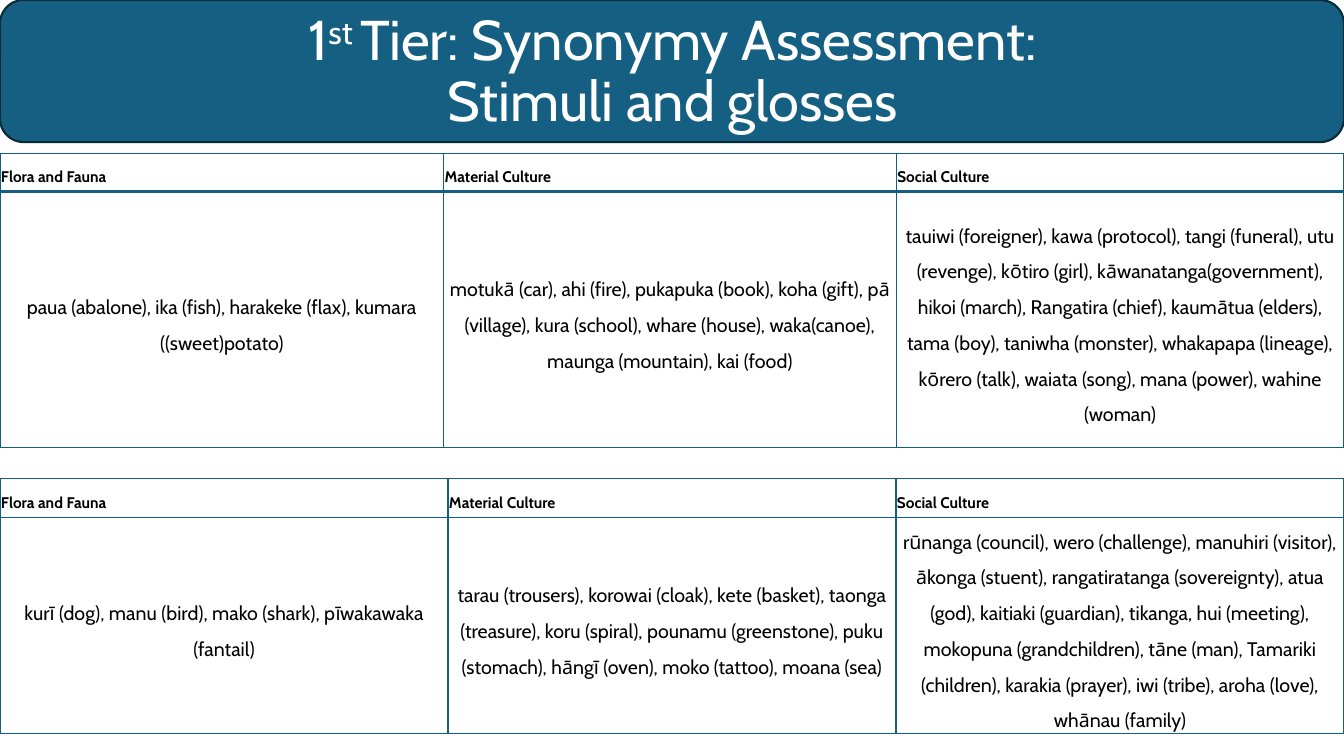
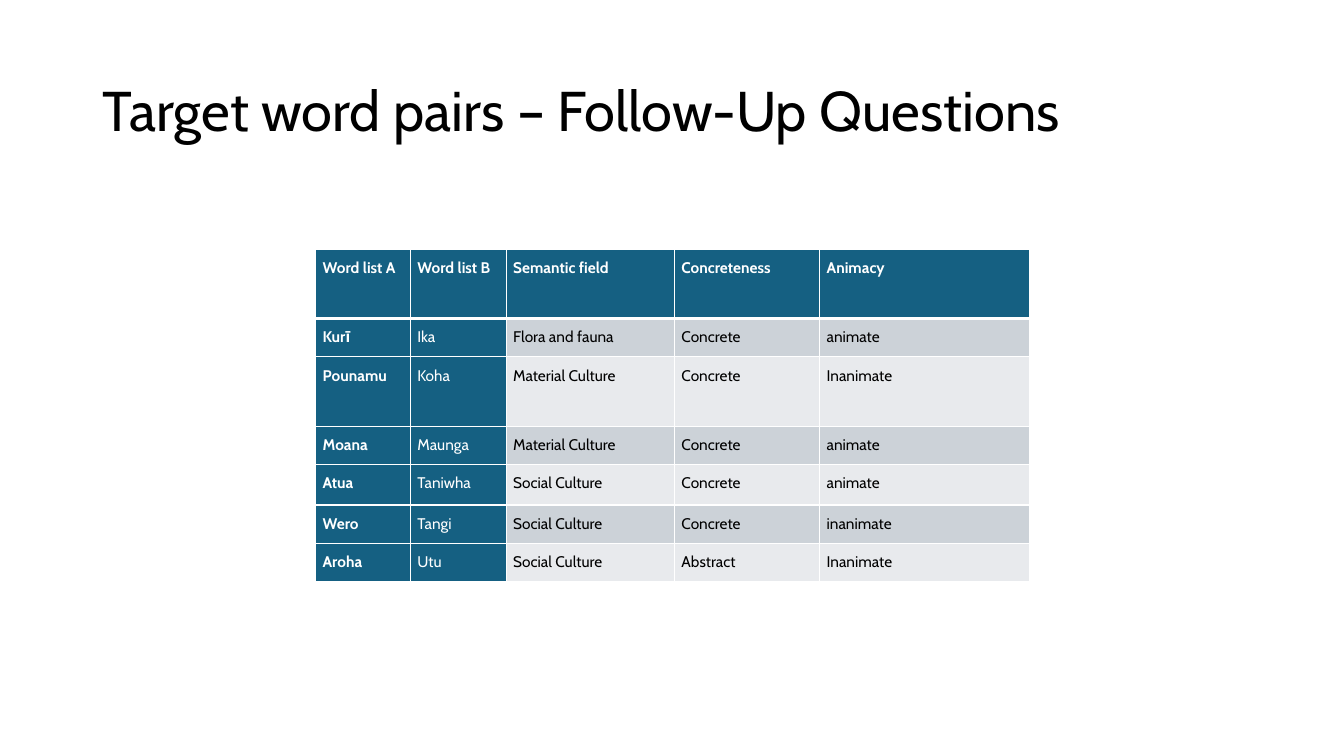
from pptx import Presentation
from pptx.dml.color import RGBColor
from pptx.enum.shapes import MSO_SHAPE
from pptx.enum.text import MSO_ANCHOR, MSO_AUTO_SIZE, PP_ALIGN
from pptx.oxml.ns import qn
from pptx.util import Inches, Pt
from lxml.etree import SubElement

FONT = "Cabin"
COLORS = {
    "blue": "156082",
    "edge": "092A39",
    "white": "FFFFFF",
    "black": "000000",
    "dark": "CCD2D8",
    "light": "E8EAED",
}
WIDTH = 13.33
FIELDS = ["Flora and Fauna", "Material Culture", "Social Culture"]
LIST_A = [
    "paua (abalone), ika (fish), harakeke (flax), kumara ((sweet)potato)",
    "motukā (car), ahi (fire), pukapuka (book), koha (gift), pā (village), "
    "kura (school), whare (house), waka(canoe), maunga (mountain), kai (food)",
    "tauiwi (foreigner), kawa (protocol), tangi (funeral), utu (revenge), "
    "kōtiro (girl), kāwanatanga(government), hikoi (march), Rangatira (chief), "
    "kaumātua (elders), tama (boy), taniwha (monster), whakapapa (lineage), "
    "kōrero (talk), waiata (song), mana (power), wahine (woman)",
]
LIST_B = [
    "kurī (dog), manu (bird), mako (shark), pīwakawaka (fantail)",
    "tarau (trousers), korowai (cloak), kete (basket), taonga (treasure), "
    "koru (spiral), pounamu (greenstone), puku (stomach), hāngī (oven), "
    "moko (tattoo), moana (sea)",
    "rūnanga (council), wero (challenge), manuhiri (visitor), ākonga (stuent), "
    "rangatiratanga (sovereignty), atua (god), kaitiaki (guardian), tikanga, "
    "hui (meeting), mokopuna (grandchildren), tāne (man), Tamariki (children), "
    "karakia (prayer), iwi (tribe), aroha (love), whānau (family)",
]
PAIRS = [
    ["Word list A", "Word list B", "Semantic field", "Concreteness", "Animacy"],
    ["Kurī", "Ika", "Flora and fauna", "Concrete", "animate"],
    ["Pounamu", "Koha", "Material Culture", "Concrete", "Inanimate"],
    ["Moana", "Maunga", "Material Culture", "Concrete", "animate"],
    ["Atua", "Taniwha", "Social Culture", "Concrete", "animate"],
    ["Wero", "Tangi", "Social Culture", "Concrete", "inanimate"],
    ["Aroha", "Utu", "Social Culture", "Abstract", "Inanimate"],
]


def get_rgb(name):
    return RGBColor.from_string(COLORS[name])


def add_run(para, text, size, color, bold=False):
    run = para.add_run()
    run.text = text
    run.font.name = FONT
    run.font.size = Pt(size)
    run.font.bold = bold
    run.font.color.rgb = get_rgb(color)
    return run


def add_slide(prs, align):
    """Add a slide and return it with its empty title paragraph."""
    slide = prs.slides.add_slide(prs.slide_layouts.get_by_name("Title Only"))
    title = slide.shapes.title
    title.left, title.top = Inches(0.92), Inches(0.4)
    title.width, title.height = Inches(11.5), Inches(1.45)
    frame = title.text_frame
    frame.word_wrap = True
    frame.auto_size = MSO_AUTO_SIZE.NONE
    frame.vertical_anchor = MSO_ANCHOR.MIDDLE
    para = frame.paragraphs[0]
    para.alignment = align
    para.line_spacing = 0.9
    return slide, para


def add_banner(slide):
    """Put the rounded band behind the title."""
    band = slide.shapes.add_shape(
        MSO_SHAPE.ROUNDED_RECTANGLE, 0, 0, Inches(WIDTH), Inches(1.41))
    band.shadow.inherit = False
    band.fill.solid()
    band.fill.fore_color.rgb = get_rgb("blue")
    band.line.color.rgb = get_rgb("edge")
    band.line.width = Pt(1.5)
    slide.shapes.title.element.addprevious(band.element)


def add_grid(slide, left, top, cols, rows):
    frame = slide.shapes.add_table(
        len(rows), len(cols), Inches(left), Inches(top),
        Inches(sum(cols)), Inches(sum(rows)))
    table = frame.table
    table.first_row = table.horz_banding = False
    for col, width in zip(table.columns, cols):
        col.width = Inches(width)
    for row, height in zip(table.rows, rows):
        row.height = Inches(height)
    return table


def set_lines(cell, color, base=1):
    """Draw the cell borders; base is the width of the bottom one."""
    props = cell._tc.get_or_add_tcPr()
    for side, width in (("L", 1), ("R", 1), ("T", 1), ("B", base)):
        line = SubElement(props, qn(f"a:ln{side}"), w=str(Pt(width)))
        fill = SubElement(line, qn("a:solidFill"))
        SubElement(fill, qn("a:srgbClr"), val=COLORS[color])


def set_cell(cell, text, size, color, bold, align, pad):
    """Fill in the text; pad holds the side and the top margins."""
    cell.margin_left = cell.margin_right = Inches(pad[0])
    cell.margin_top = cell.margin_bottom = Inches(pad[1])
    para = cell.text_frame.paragraphs[0]
    para.alignment = align
    para.line_spacing = 1.5
    para.space_after = Pt(8)
    add_run(para, text, size, color, bold)


def add_words(slide, top, cols, rows, words, rule):
    """Add a word list; rule is the line width below its header."""
    table = add_grid(slide, 0, top, cols, rows)
    styles = [(FIELDS, 11, True, PP_ALIGN.LEFT, rule),
              (words, 14, False, PP_ALIGN.CENTER, 1)]
    for y, (texts, size, bold, align, base) in enumerate(styles):
        for x, text in enumerate(texts):
            cell = table.cell(y, x)
            set_cell(cell, text, size, "black", bold, align, (0.01, 0.01))
            cell.vertical_anchor = MSO_ANCHOR.MIDDLE
            set_lines(cell, "blue", base)
            # The lower edge of a header is also the upper edge of its body.
            cell.fill.background()


def add_pairs(slide):
    table = add_grid(slide, 3.13, 2.47, [0.94, 0.95, 1.67, 1.44, 2.08],
                     [0.69, 0.38, 0.69, 0.38, 0.4, 0.38, 0.38])
    for y, row in enumerate(PAIRS):
        for x, text in enumerate(row):
            cell = table.cell(y, x)
            head = y == 0 or x < 2
            set_cell(cell, text, 11, "white" if head else "black",
                     y == 0 or x == 0, PP_ALIGN.JUSTIFY, (0.07, 0))
            set_lines(cell, "white", 3 if y == 0 else 1)
            shade = "blue" if head else "dark" if y % 2 else "light"
            cell.fill.solid()
            cell.fill.fore_color.rgb = get_rgb(shade)


def build_lists(prs):
    slide, para = add_slide(prs, PP_ALIGN.CENTER)
    slide.shapes.title.top = 0
    add_banner(slide)
    add_run(para, "1", 40, "white")
    mark = add_run(para, "st ", 40, "white")
    mark._r.get_or_add_rPr().set("baseline", "30000")
    add_run(para, "Tier: Synonymy Assessment:", 40, "white")
    para.add_line_break()
    add_run(para, "Stimuli and glosses", 40, "white")
    add_words(slide, 1.52, [4.4, 4.49, 4.44], [0.38, 2.54], LIST_A, 2)
    add_words(slide, 4.75, [WIDTH / 3] * 3, [0.38, 1.87], LIST_B, 1)


def build_pairs(prs):
    slide, para = add_slide(prs, PP_ALIGN.LEFT)
    add_run(para, "Target word pairs – Follow-Up Questions", 40, "black")
    add_pairs(slide)


def main():
    prs = Presentation()
    prs.slide_width, prs.slide_height = Inches(WIDTH), Inches(7.5)
    build_lists(prs)
    build_pairs(prs)
    prs.save("out.pptx")


if __name__ == "__main__":
    main()
